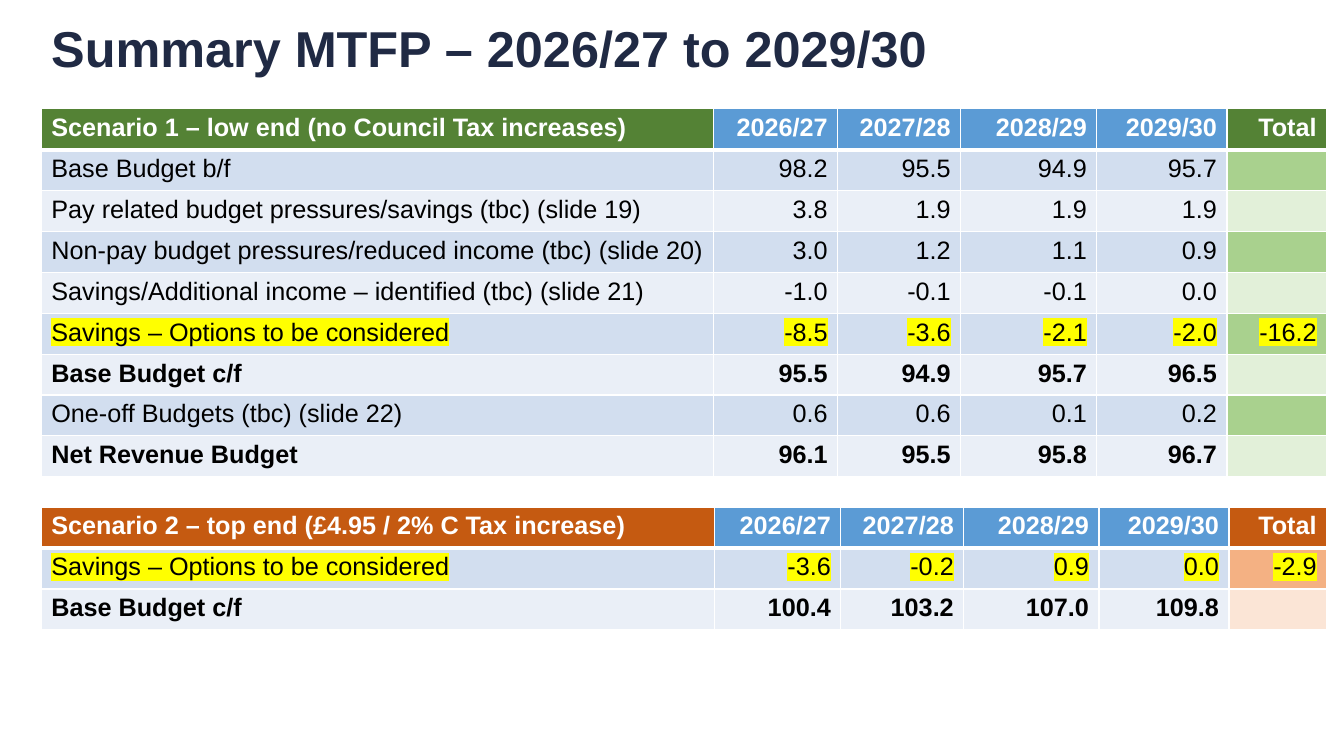
from lxml.etree import SubElement
from pptx import Presentation
from pptx.dml.color import RGBColor
from pptx.enum.text import MSO_ANCHOR as Anchor, PP_ALIGN as Align
from pptx.oxml.ns import qn
from pptx.util import Inches, Pt

YEARS = ["2026/27", "2027/28", "2028/29", "2029/30"]
SAVINGS = "Savings – Options to be considered"
BOLD = {"Base Budget c/f", "Net Revenue Budget"}
BLUE = "5B9BD5"
BANDS = ["D2DEEF", "EAEFF7"]
LOW = [
    ["Base Budget b/f", "98.2", "95.5", "94.9", "95.7", ""],
    ["Pay related budget pressures/savings (tbc) (slide 19)", "3.8", "1.9", "1.9", "1.9", ""],
    ["Non-pay budget pressures/reduced income (tbc) (slide 20)", "3.0", "1.2", "1.1", "0.9", ""],
    ["Savings/Additional income – identified (tbc) (slide 21)", "-1.0", "-0.1", "-0.1", "0.0", ""],
    [SAVINGS, "-8.5", "-3.6", "-2.1", "-2.0", "-16.2"],
    ["Base Budget c/f", "95.5", "94.9", "95.7", "96.5", ""],
    ["One-off Budgets (tbc) (slide 22)", "0.6", "0.6", "0.1", "0.2", ""],
    ["Net Revenue Budget", "96.1", "95.5", "95.8", "96.7", ""],
]
TOP = [
    [SAVINGS, "-3.6", "-0.2", "0.9", "0.0", "-2.9"],
    ["Base Budget c/f", "100.4", "103.2", "107.0", "109.8", ""],
]


def rgb(code):
    return RGBColor.from_string(code)


def style(font, size, color, bold):
    font.name = "Arial"
    font.size = Pt(size)
    font.bold = bold
    font.color.rgb = rgb(color)


def mark(run):
    props = run.font._element if hasattr(run.font, "_element") else run._r.get_or_add_rPr()
    glow = SubElement(props, qn("a:highlight"))
    SubElement(glow, qn("a:srgbClr"), val="FFFF00")
    props.find(qn("a:solidFill")).addnext(glow)


def border(cell, row):
    props = cell._tc.get_or_add_tcPr()
    heavy = {0: "B", 1: "T"}.get(row)
    for side in "LRTB":
        width = Pt(3 if side == heavy else 1)
        line = SubElement(props, qn(f"a:ln{side}"), w=str(width))
        fill = SubElement(line, qn("a:solidFill"))
        SubElement(fill, qn("a:srgbClr"), val="FFFFFF")


def add_title(slide, text):
    box = slide.shapes.add_textbox(Inches(0.41), Inches(0.08), Inches(9.24), Inches(0.85))
    frame = box.text_frame
    frame.word_wrap = True
    frame.vertical_anchor = Anchor.MIDDLE
    frame.text = text
    para = frame.paragraphs[0]
    para.line_spacing = 0.9
    style(para.runs[0].font, 36, "202A44", True)


def fill_cell(cell, text, row, col, label, color):
    border(cell, row)
    cell.fill.solid()
    cell.fill.fore_color.rgb = rgb(color)
    cell.text = text
    para = cell.text_frame.paragraphs[0]
    para.alignment = Align.RIGHT if col else Align.LEFT
    para.font.size = Pt(18)
    for run in para.runs:
        style(run.font, 18, "000000" if row else "FFFFFF", row == 0 or label in BOLD)
        if label == SAVINGS:
            mark(run)


def add_budget(slide, top, height, widths, name, body, head, tints):
    rows = [[name, *YEARS, "Total"], *body]
    table = slide.shapes.add_table(
        len(rows), len(widths), Inches(0.41), Inches(top), Inches(sum(widths)), Inches(height)
    ).table
    for column, width in zip(table.columns, widths):
        column.width = Inches(width)
    last = len(widths) - 1
    for r, values in enumerate(rows):
        table.rows[r].height = Inches(height / len(rows))
        for c, text in enumerate(values):
            if r == 0:
                color = head if c in (0, last) else BLUE
            else:
                color = (tints if c == last else BANDS)[(r - 1) % 2]
            fill_cell(table.cell(r, c), text, r, c, values[0], color)


def main():
    deck = Presentation()
    deck.slide_width, deck.slide_height = Inches(13.33), Inches(7.5)
    slide = deck.slides.add_slide(deck.slide_layouts[6])
    add_title(slide, "Summary MTFP – 2026/27 to 2029/30")
    add_budget(slide, 1.08, 3.65, [6.67, 1.23, 1.22, 1.35, 1.29, 0.99],
               "Scenario 1 – low end (no Council Tax increases)",
               LOW, "548235", ["A9D18E", "E2F0D9"])
    add_budget(slide, 5.03, 1.22, [6.68, 1.25, 1.22, 1.34, 1.29, 0.97],
               "Scenario 2 – top end (£4.95 / 2% C Tax increase)",
               TOP, "C55A11", ["F4B183", "FBE5D6"])
    deck.save("out.pptx")


if __name__ == "__main__":
    main()
